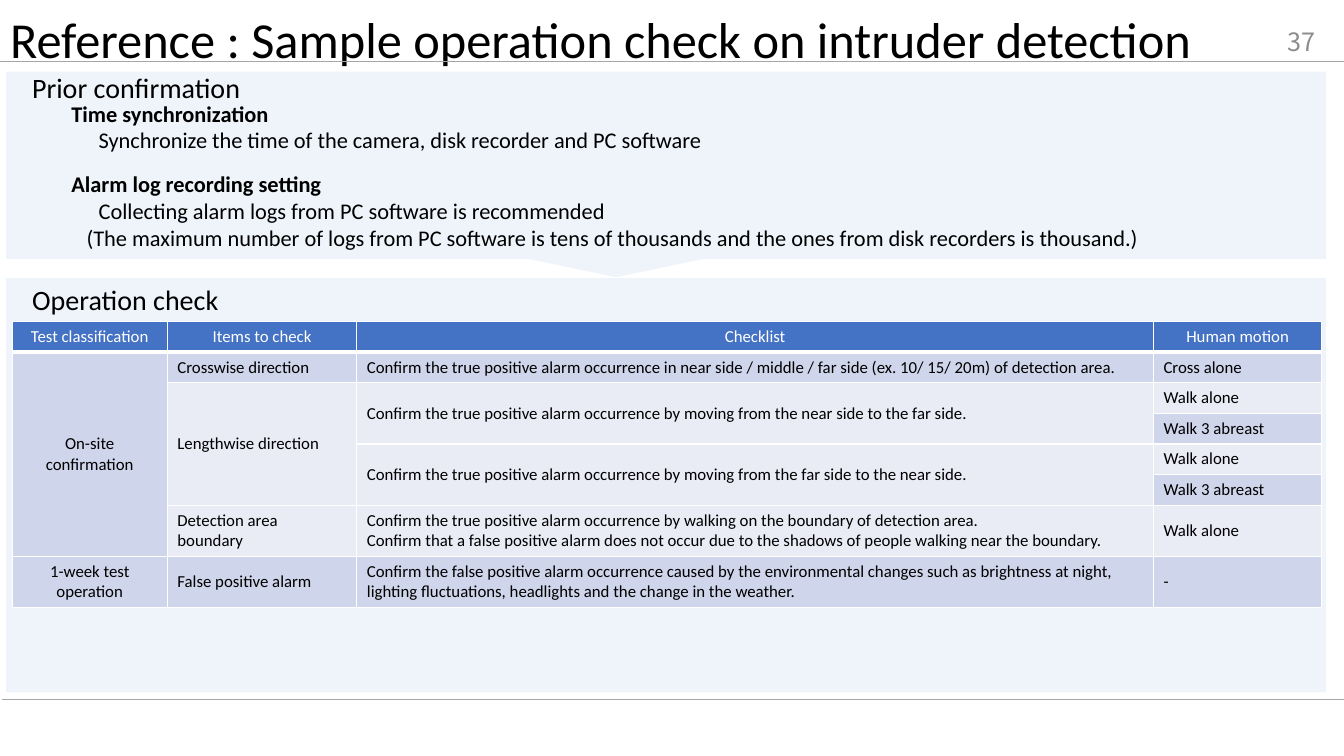
from typing import NamedTuple

from lxml import etree
from pptx import Presentation
from pptx.dml.color import RGBColor
from pptx.enum.shapes import MSO_CONNECTOR, MSO_SHAPE
from pptx.enum.text import MSO_ANCHOR, MSO_AUTO_SIZE, PP_ALIGN
from pptx.oxml.ns import qn
from pptx.util import Inches, Pt

RECT, TRIANGLE = MSO_SHAPE.RECTANGLE, MSO_SHAPE.ISOSCELES_TRIANGLE
STRAIGHT = MSO_CONNECTOR.STRAIGHT
MIDDLE, TOP = MSO_ANCHOR.MIDDLE, MSO_ANCHOR.TOP
LEFT, CENTER, RIGHT = PP_ALIGN.LEFT, PP_ALIGN.CENTER, PP_ALIGN.RIGHT
FONT = "Calibri"
PALE, GREY, BLACK, WHITE = "DEEBF7", "A6A6A6", "000000", "FFFFFF"
HEAD, BANDS = "4472C4", ("E9EBF5", "CFD5EA")


class Box(NamedTuple):
    left: float
    top: float
    width: float
    height: float


class Panel(NamedTuple):
    kind: MSO_SHAPE
    box: Box
    turn: int = 0


class Line(NamedTuple):
    text: str
    size: float
    bold: bool = False
    indent: float = 0
    before: float = 0
    color: str = BLACK
    font: str = FONT
    align: PP_ALIGN = LEFT


class Label(NamedTuple):
    box: Box
    lines: list[Line]
    wrap: bool = True
    anchor: MSO_ANCHOR = TOP


class Item(NamedTuple):
    row: int
    col: int
    lines: list[str]
    span: int = 1


RULES = [(0, 0.61), (0.02, 6.94)]
PANELS = [
    Panel(RECT, Box(0.06, 2.76, 13.09, 4.11)),
    Panel(RECT, Box(0.06, 0.71, 13.09, 1.86)),
    Panel(TRIANGLE, Box(5.25, 2.57, 1.72, 0.18), 180),
]
LABELS = [
    Label(Box(10.15, 0.21, 3, 0.4), [
        Line("37", 18, color="8C8C8C", font="Noto Sans CJK JP", align=RIGHT),
    ], anchor=MIDDLE),
    Label(Box(0.61, 0.94, 11.09, 1.62), [
        Line("Time synchronization", 16, True),
        Line("Synchronize the time of the camera, disk recorder and PC software",
             16, indent=0.27),
        Line("Alarm log recording setting", 16, True, before=12),
        Line("Collecting alarm logs from PC software is recommended",
             16, indent=0.27),
        Line("(The maximum number of logs from PC software is tens of thousands "
             "and the ones from disk recorders is thousand.)", 16, indent=0.15),
    ]),
    Label(Box(0.22, 0.65, 2.29, 0.44), [Line("Prior confirmation", 20)], False),
    Label(Box(0.22, 2.75, 2.07, 0.44), [Line("Operation check", 20)], False),
]
COLS = [1.54, 1.88, 7.9, 1.67]
ROWS = [0.3] * 6 + [0.5] * 2
HEADS = ["Test classification", "Items to check", "Checklist", "Human motion"]
MOTIONS = ["Cross alone", "Walk alone", "Walk 3 abreast", "Walk alone",
           "Walk 3 abreast", "Walk alone", "-"]
ITEMS = [
    *(Item(0, col, [text]) for col, text in enumerate(HEADS)),
    *(Item(row, 3, [text]) for row, text in enumerate(MOTIONS, 1)),
    Item(1, 0, ["On-site confirmation"], 6),
    Item(7, 0, ["1-week test operation"]),
    Item(1, 1, ["Crosswise direction"]),
    Item(2, 1, ["Lengthwise direction"], 4),
    Item(6, 1, ["Detection area boundary"]),
    Item(7, 1, ["False positive alarm"]),
    Item(1, 2, ["Confirm the true positive alarm occurrence in near side / middle "
                "/ far side (ex. 10/ 15/ 20m) of detection area."]),
    Item(2, 2, ["Confirm the true positive alarm occurrence by moving from the "
                "near side to the far side."], 2),
    Item(4, 2, ["Confirm the true positive alarm occurrence by moving from the "
                "far side to the near side."], 2),
    Item(6, 2, ["Confirm the true positive alarm occurrence by walking on the "
                "boundary of detection area.",
                "Confirm that a false positive alarm does not occur due to the "
                "shadows of people walking near the boundary."]),
    Item(7, 2, ["Confirm the false positive alarm occurrence caused by the "
                "environmental changes such as brightness at night, lighting "
                "fluctuations, headlights and the change in the weather."]),
]


def paint(target, color: str) -> None:
    """Give a fill one solid colour."""
    target.solid()
    target.fore_color.rgb = RGBColor.from_string(color)


def place(box: Box) -> list[int]:
    return [Inches(side) for side in box]


def write(frame, lines: list[Line]) -> None:
    for i, line in enumerate(lines):
        para = frame.add_paragraph() if i else frame.paragraphs[0]
        para.alignment = line.align
        if line.before:
            para.space_before = Pt(line.before)
        if line.indent:
            para._p.get_or_add_pPr().set("marL", str(Inches(line.indent)))
        run = para.add_run()
        run.text = line.text
        run.font.name, run.font.size = line.font, Pt(line.size)
        run.font.bold = line.bold
        paint(run.font.fill, line.color)


def add_rule(slide, left: float, top: float) -> None:
    rule = slide.shapes.add_connector(
        STRAIGHT, Inches(left), Inches(top), Inches(13.33), Inches(top))
    rule.line.width = Pt(0.75)
    paint(rule.line.fill, GREY)
    etree.SubElement(rule._element.spPr, qn("a:effectLst"))


def add_panel(slide, panel: Panel) -> None:
    shape = slide.shapes.add_shape(panel.kind, *place(panel.box))
    shape.shadow.inherit = False
    shape.rotation = panel.turn
    shape.line.fill.background()
    paint(shape.fill, PALE)
    tint = shape._element.spPr.find(qn("a:solidFill"))[0]
    etree.SubElement(tint, qn("a:alpha")).set("val", "50000")


def add_label(slide, label: Label) -> None:
    frame = slide.shapes.add_textbox(*place(label.box)).text_frame
    frame.word_wrap = label.wrap
    frame.auto_size = MSO_AUTO_SIZE.NONE
    frame.vertical_anchor = label.anchor
    write(frame, label.lines)


def edge(cell, row: int) -> None:
    """Draw white cell borders, thick under the header row."""
    props = cell._tc.get_or_add_tcPr()
    thick = {(0, "B"), (1, "T")}
    for i, side in enumerate("LRTB"):
        line = etree.Element(qn(f"a:ln{side}"))
        line.set("w", str(Pt(3 if (row, side) in thick else 1)))
        fill = etree.SubElement(line, qn("a:solidFill"))
        etree.SubElement(fill, qn("a:srgbClr")).set("val", WHITE)
        props.insert(i, line)


def add_checks(slide) -> None:
    table = slide.shapes.add_table(
        len(ROWS), len(COLS), Inches(0.12), Inches(3.19),
        Inches(sum(COLS)), Inches(sum(ROWS))).table
    for col, width in zip(table.columns, COLS):
        col.width = Inches(width)
    for row, height in enumerate(ROWS):
        table.rows[row].height = Inches(height)
        for cell in table.rows[row].cells:
            paint(cell.fill, BANDS[row % 2] if row else HEAD)
            edge(cell, row)
    for item in ITEMS:
        cell = table.cell(item.row, item.col)
        if item.span > 1:
            cell.merge(table.cell(item.row + item.span - 1, item.col))
        cell.vertical_anchor = MIDDLE
        align = LEFT if item.row and item.col else CENTER
        color = BLACK if item.row else WHITE
        write(cell.text_frame, [Line(text, 12, color=color, align=align)
                                for text in item.lines])


def main() -> None:
    deck = Presentation()
    deck.slide_width, deck.slide_height = Inches(13.33), Inches(7.5)
    slide = deck.slides.add_slide(deck.slide_layouts[5])
    for left, top in RULES:
        add_rule(slide, left, top)
    for panel in PANELS:
        add_panel(slide, panel)
    title = slide.shapes.title
    title.left, title.top, title.width, title.height = place(
        Box(0, 0.11, 13.48, 0.62))
    frame = title.text_frame
    frame.auto_size, frame.vertical_anchor = MSO_AUTO_SIZE.NONE, MIDDLE
    write(frame, [Line("Reference : Sample operation check on intruder detection", 36)])
    frame.paragraphs[0].line_spacing = 0.9
    add_checks(slide)
    for label in LABELS:
        add_label(slide, label)
    deck.save("out.pptx")


if __name__ == "__main__":
    main()
